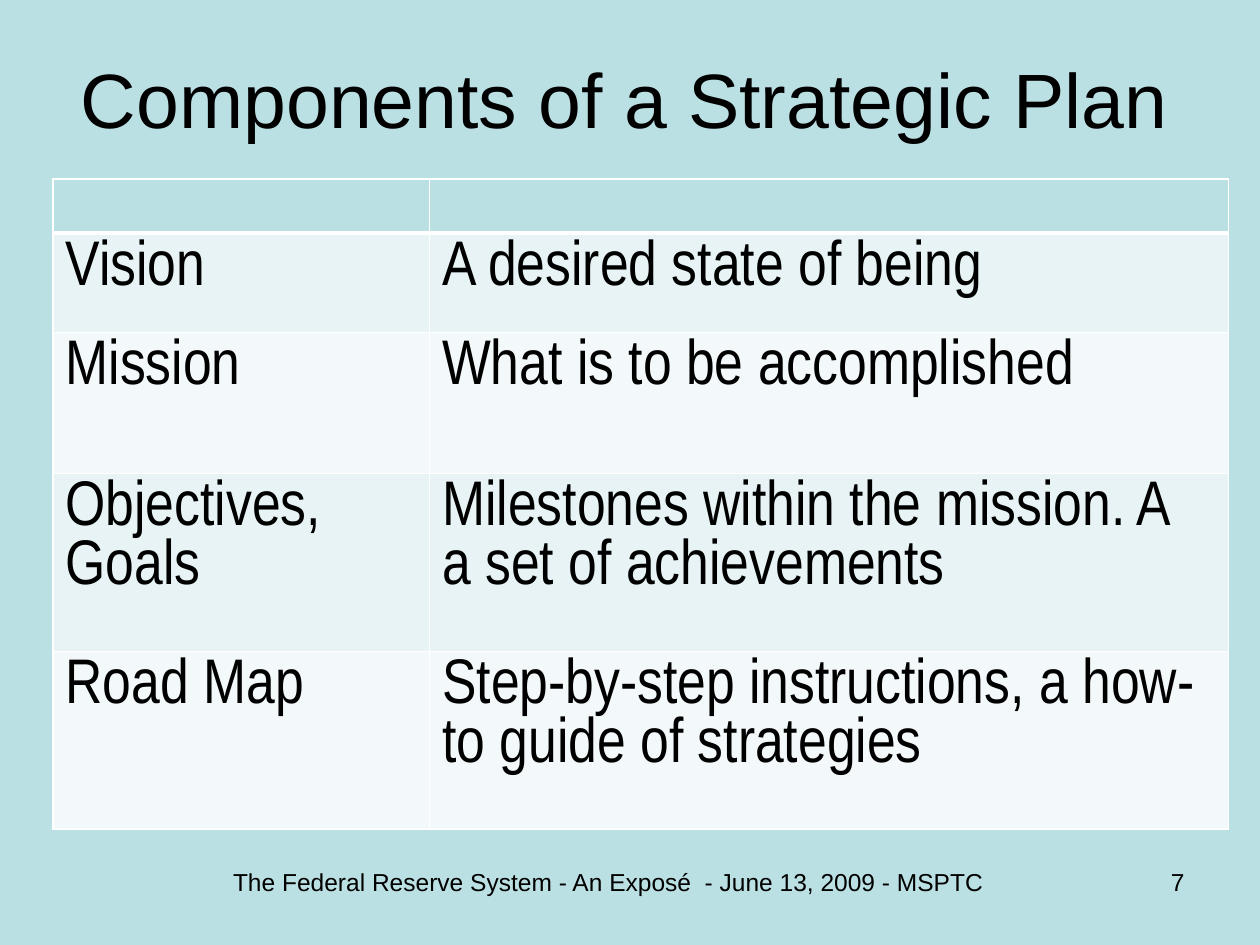
import pptx
import pptx.util
import pptx.dml.color
import pptx.enum.text
import pptx.oxml
import pptx.oxml.ns

Inches = pptx.util.Inches
Pt = pptx.util.Pt
ALIGN = pptx.enum.text.PP_ALIGN
ANCHOR = pptx.enum.text.MSO_ANCHOR

BACKGROUND = "BBE0E3"
BAND_FILLS = ["E7F3F4", "F3F9FA"]
COLUMN_WIDTHS = [2.99, 6.34]
ROW_HEIGHTS = [0.43, 0.79, 1.12, 1.41, 1.41]
ROWS = [
    ("", ""),
    ("Vision", "A desired state of being"),
    ("Mission", "What is to be accomplished"),
    ("Objectives, Goals", "Milestones within the mission. A\na set of achievements"),
    ("Road Map", "Step-by-step instructions, a how-to guide of strategies"),
]


def color(hex_string):
    return pptx.dml.color.RGBColor.from_string(hex_string)


def write_text(frame, text, size=14, font="Arial", fill="000000", align=ALIGN.LEFT):
    """Write one paragraph for each line of the text."""
    for index, line in enumerate(text.split("\n")):
        para = frame.add_paragraph() if index else frame.paragraphs[0]
        para.alignment = align
        span = para.add_run()
        span.text = line
        span.font.size = Pt(size)
        span.font.name = font
        span.font.color.rgb = color(fill)


def add_text_box(page, bounds, text, anchor=ANCHOR.TOP, **text_format):
    box = page.shapes.add_textbox(*map(Inches, bounds))
    box.text_frame.word_wrap = True
    box.text_frame.vertical_anchor = anchor
    write_text(box.text_frame, text, **text_format)


def set_borders(cell, widths, hex_string="FFFFFF"):
    """Draw cell borders; widths maps the sides L, R, T, B, in that order, to points."""
    properties = cell._tc.get_or_add_tcPr()
    for index, (side, width) in enumerate(widths.items()):
        line = pptx.oxml.parse_xml(
            f'<a:ln{side} {pptx.oxml.ns.nsdecls("a")} w="{Pt(width)}">'
            f'<a:solidFill><a:srgbClr val="{hex_string}"/></a:solidFill></a:ln{side}>'
        )
        properties.insert(index, line)


def add_components_table(page, bounds):
    table = page.shapes.add_table(
        len(ROWS), len(COLUMN_WIDTHS), *map(Inches, bounds)).table
    for column, width in zip(table.columns, COLUMN_WIDTHS):
        column.width = Inches(width)
    for row_index, (texts, height) in enumerate(zip(ROWS, ROW_HEIGHTS)):
        table.rows[row_index].height = Inches(height)
        is_header = row_index == 0
        fill = BACKGROUND if is_header else BAND_FILLS[(row_index - 1) % 2]
        top = 3 if row_index == 1 else 1
        bottom = 3 if is_header else 1
        for column_index, text in enumerate(texts):
            cell = table.cell(row_index, column_index)
            cell.fill.solid()
            cell.fill.fore_color.rgb = color(fill)
            set_borders(cell, {"L": 1, "R": 1, "T": top, "B": bottom})
            if text:
                write_text(cell.text_frame, text, size=36, font="Arial Narrow")


def add_footer(page, top, height):
    add_text_box(page, (7.17, top, 2.33, height), "7", align=ALIGN.RIGHT)
    add_text_box(page, (0.58, top, 8.5, height),
                 "The Federal Reserve System - An Exposé  - June 13, 2009 - MSPTC",
                 align=ALIGN.CENTER)


def main():
    deck = pptx.Presentation()
    deck.slide_width, deck.slide_height = Inches(10), Inches(7.5)
    page = deck.slides.add_slide(deck.slide_layouts[6])
    page.background.fill.solid()
    page.background.fill.fore_color.rgb = color(BACKGROUND)
    add_text_box(page, (0.5, 0.3, 8.92, 0.95), "Components of a Strategic Plan",
                 anchor=ANCHOR.MIDDLE, size=44, align=ALIGN.CENTER)
    add_components_table(page, (0.42, 1.42, sum(COLUMN_WIDTHS), sum(ROW_HEIGHTS)))
    add_footer(page, 6.83, 0.52)
    deck.save("out.pptx")


if __name__ == "__main__":
    main()
